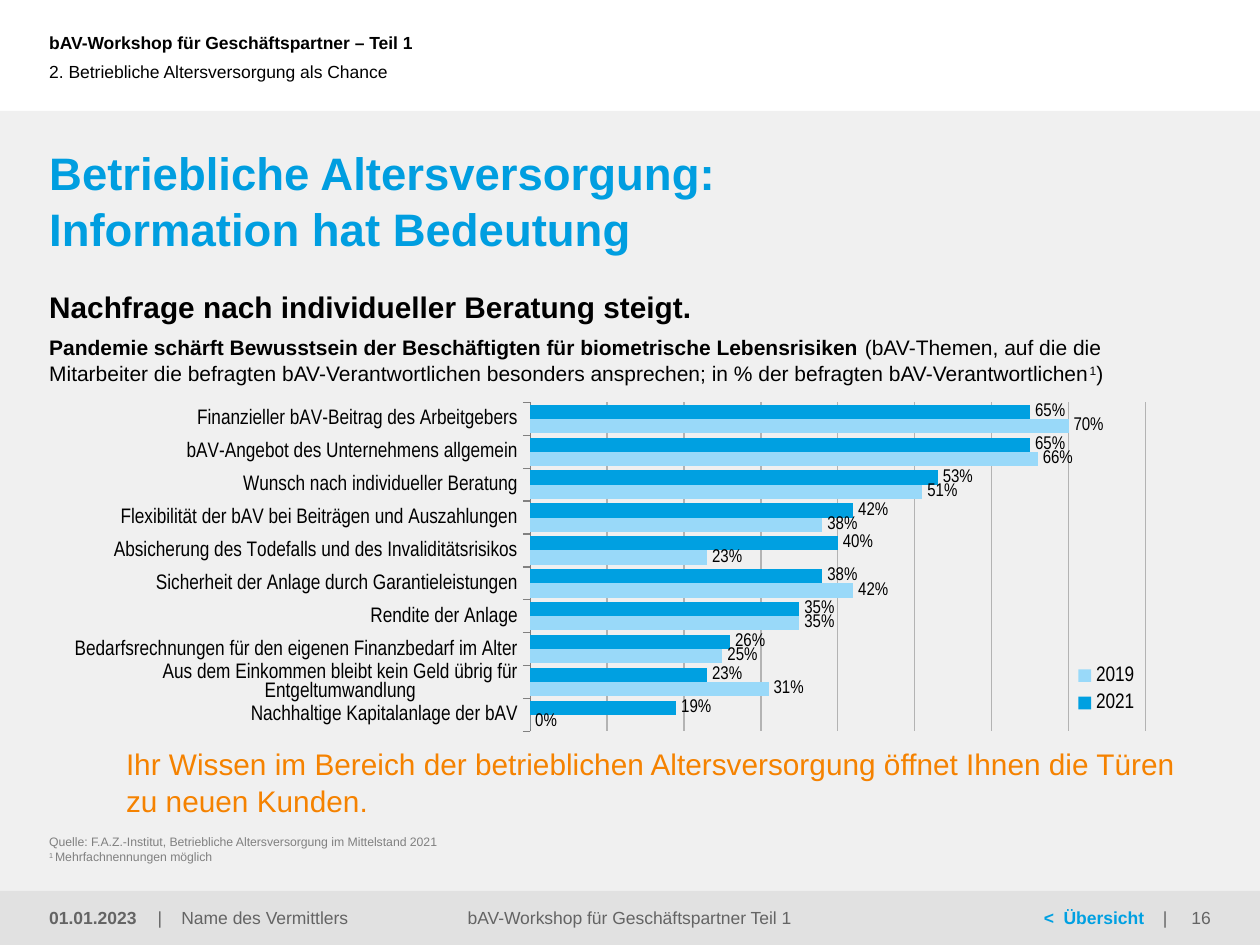
from lxml.etree import SubElement
from pptx import Presentation
from pptx.chart.data import CategoryChartData
from pptx.dml.color import RGBColor
from pptx.enum.chart import XL_CHART_TYPE, XL_LABEL_POSITION, XL_LEGEND_POSITION, XL_TICK_LABEL_POSITION, XL_TICK_MARK
from pptx.enum.shapes import MSO_SHAPE
from pptx.enum.text import MSO_ANCHOR, MSO_AUTO_SIZE, PP_ALIGN
from pptx.oxml import parse_xml
from pptx.oxml.ns import nsdecls, qn
from pptx.util import Inches, Pt

COLORS = {
    "panel": "F0F0F0", "footer": "E1E1E1", "black": "000000", "title": "009EE0",
    "blue": "00A0E1", "light blue": "99D9F9", "orange": "F58200",
    "gray": "646464", "source": "808080", "grid": "B3B3B3", "axis": "808080",
}


def rgb(name):
    return RGBColor.from_string(COLORS[name])


def fill_text(shape, box, runs, size, color, anchor=MSO_ANCHOR.TOP,
              align=PP_ALIGN.LEFT, insets=(0, 0, 0, 0), spacing=1.0):
    """Place a shape and write one paragraph; runs are (text, bold, options)."""
    shape.left, shape.top, shape.width, shape.height = [Inches(value) for value in box]
    frame = shape.text_frame
    frame.word_wrap = True
    frame.auto_size = MSO_AUTO_SIZE.NONE
    frame.vertical_anchor = anchor
    (frame.margin_left, frame.margin_top,
     frame.margin_right, frame.margin_bottom) = [Inches(value) for value in insets]
    paragraph = frame.paragraphs[0]
    paragraph.alignment = align
    paragraph.line_spacing = spacing
    paragraph.space_before = paragraph.space_after = Pt(0)
    properties = paragraph._p.get_or_add_pPr()
    properties.set("marL", "0")
    properties.set("indent", "0")
    SubElement(properties, qn("a:buNone"))
    for text, bold, *options in runs:
        if "break" in options:
            paragraph.add_line_break()
        run = paragraph.add_run()
        run.text = text
        run.font.name = "Arial"
        run.font.size = Pt(size)
        run.font.bold = bold
        run.font.color.rgb = rgb("blue" if "link" in options else color)
        if "superscript" in options:
            run.font._element.set("baseline", "30000")


presentation = Presentation()
presentation.slide_width = Inches(10)
presentation.slide_height = Inches(7.5)
comparison_layout = presentation.slide_layouts[4]
slide = presentation.slides.add_slide(comparison_layout)
shapes = slide.shapes
title, heading, source, message, chapter = slide.placeholders

# Background bands, behind the placeholders
for position, (color, top, height) in enumerate([("panel", 0.88, 6.62), ("footer", 7.07, 0.43)]):
    band = shapes.add_shape(MSO_SHAPE.RECTANGLE, 0, Inches(top), Inches(10), Inches(height))
    band.shadow.inherit = False
    band.fill.solid()
    band.fill.fore_color.rgb = rgb(color)
    band.line.fill.background()
    shapes._spTree.remove(band._element)
    shapes._spTree.insert(2 + position, band._element)

# Title and body texts
fill_text(title, (0.39, 1.14, 9.22, 0.9),
          [("Betriebliche Altersversorgung:", True),
           ("Information hat Bedeutung", True, "break")], 26, "title", spacing=1.03)
fill_text(heading, (0.39, 2.28, 9.22, 0.29),
          [("Nachfrage nach individueller Beratung steigt.", True)], 17, "black", spacing=1.05)
fill_text(source, (0.39, 6.61, 9.21, 0.25),
          [("Quelle: F.A.Z.-Institut, Betriebliche Altersversorgung im Mittelstand 2021", False),
           ("1 ", False, "break", "superscript"),
           ("Mehrfachnennungen möglich", False)],
          7, "source", MSO_ANCHOR.BOTTOM, spacing=1.05)
fill_text(message, (1, 5.9, 8.61, 0.68),
          [("Ihr Wissen im Bereich der betrieblichen Altersversorgung öffnet Ihnen "
            "die Türen zu neuen Kunden.", False)],
          17, "orange", MSO_ANCHOR.MIDDLE, insets=(0, 0, 0, 0.08), spacing=1.05)
fill_text(chapter, (0, 0.25, 7.15, 0.63),
          [("2. Betriebliche Altersversorgung als Chance", False)],
          10, "black", MSO_ANCHOR.MIDDLE, insets=(0.39, 0, 0, 0))

# Header, footer: box, runs, colour, alignment, insets
none = (0, 0, 0, 0)
left_edge = (0.39, 0.05, 0.1, 0.05)
right_edge = (0.1, 0.05, 0.39, 0.05)
for box, runs, color, align, insets in [
    ((0, 0, 6.98, 0.67), [("bAV-Workshop für Geschäftspartner – Teil 1", True)],
     "black", PP_ALIGN.LEFT, left_edge),
    ((0, 7.07, 1.22, 0.43), [("01.01.2023", True)], "gray", PP_ALIGN.LEFT, left_edge),
    ((1.25, 7.07, 0.15, 0.43), [("|", False)], "gray", PP_ALIGN.LEFT, none),
    ((1.44, 7.07, 2.23, 0.43), [("Name des Vermittlers", False)], "gray", PP_ALIGN.LEFT, none),
    ((3.02, 7.07, 3.95, 0.43), [("bAV-Workshop für Geschäftspartner Teil 1", False)],
     "gray", PP_ALIGN.CENTER, none),
    ((6.88, 7.07, 2.2, 0.43), [("<  Übersicht", True, "link")], "gray", PP_ALIGN.RIGHT, none),
    ((9.23, 7.07, 0.1, 0.43), [("|", False)], "gray", PP_ALIGN.LEFT, none),
    ((9.06, 7.07, 0.94, 0.43), [("16", False)], "gray", PP_ALIGN.RIGHT, right_edge),
]:
    text_box = shapes.add_textbox(0, 0, 0, 0)
    fill_text(text_box, box, runs, 10, color, MSO_ANCHOR.MIDDLE, align, insets)

# Bar chart
topics = [
    ("Finanzieller bAV-Beitrag des Arbeitgebers", 0.65, 0.70),
    ("bAV-Angebot des Unternehmens allgemein", 0.65, 0.66),
    ("Wunsch nach individueller Beratung", 0.53, 0.51),
    ("Flexibilität der bAV bei Beiträgen und Auszahlungen", 0.42, 0.38),
    ("Absicherung des Todefalls und des Invaliditätsrisikos", 0.40, 0.23),
    ("Sicherheit der Anlage durch Garantieleistungen", 0.38, 0.42),
    ("Rendite der Anlage", 0.35, 0.35),
    ("Bedarfsrechnungen für den eigenen Finanzbedarf im Alter", 0.26, 0.25),
    ("Aus dem Einkommen bleibt kein Geld übrig für Entgeltumwandlung", 0.23, 0.31),
    ("Nachhaltige Kapitalanlage der bAV", 0.19, 0),
]
names, values_2021, values_2019 = zip(*topics)
chart_data = CategoryChartData(number_format="0%")
chart_data.categories = names
chart_data.add_series("2021", values_2021)
chart_data.add_series("2019", values_2019)
chart = shapes.add_chart(XL_CHART_TYPE.BAR_CLUSTERED, Inches(0.39), Inches(3.05),
                         Inches(8.88), Inches(2.9), chart_data).chart
chart.has_title = False
chart.font.name = "Arial Narrow"
chart.font.size = Pt(12)
chart.font.color.rgb = rgb("black")

plot = chart.plots[0]
plot.gap_width = 30
plot.overlap = 0
plot.vary_by_categories = False
for series, color in zip(plot.series, ["blue", "light blue"]):
    series.format.fill.solid()
    series.format.fill.fore_color.rgb = rgb(color)
    labels = series.data_labels
    labels.show_value = True
    labels.position = XL_LABEL_POSITION.OUTSIDE_END
    labels.number_format = "0%"
    labels.number_format_is_linked = False
    labels.font.size = Pt(10.5)

category_axis = chart.category_axis
category_axis.reverse_order = True
category_axis.major_tick_mark = XL_TICK_MARK.OUTSIDE
category_axis.tick_label_position = XL_TICK_LABEL_POSITION.LOW
category_axis.tick_labels.font.size = Pt(12)
category_axis.format.line.color.rgb = rgb("axis")
value_axis = chart.value_axis
value_axis.visible = False
value_axis.minimum_scale, value_axis.maximum_scale, value_axis.major_unit = 0, 0.8, 0.1
value_axis.has_major_gridlines = True
value_axis.major_gridlines.format.line.color.rgb = rgb("grid")
value_axis.major_gridlines.format.line.width = Pt(0.75)

chart.has_legend = True
chart.legend.position = XL_LEGEND_POSITION.RIGHT
chart.legend.include_in_layout = False
chart.legend.font.size = Pt(12)

# Fixed places of the plot area and the legend, as fractions of the chart
plot_area = chart._chartSpace.chart.plotArea
for parent, index, target, place in [
    (plot_area, 0, '<c:layoutTarget val="inner"/>', (0.43, 0.05, 0.55, 0.9)),
    (chart.legend._element, 1, "", (0.91, 0.75, 0.07, 0.17)),
]:
    for old_layout in parent.findall(qn("c:layout")):
        parent.remove(old_layout)
    modes = "".join(f'<c:{side}Mode val="edge"/>' for side in "xy")
    sizes = "".join(f'<c:{side} val="{value}"/>' for side, value in zip("xywh", place))
    parent.insert(index, parse_xml(
        f'<c:layout {nsdecls("c")}><c:manualLayout>{target}{modes}{sizes}</c:manualLayout></c:layout>'))

# Introduction above the chart
introduction = shapes.add_textbox(0, 0, 0, 0)
fill_text(introduction, (0.39, 2.6, 9.22, 0.45),
          [("Pandemie schärft Bewusstsein der Beschäftigten für biometrische Lebensrisiken ", True),
           ("(bAV-Themen, auf die die Mitarbeiter die befragten bAV-Verantwortlichen besonders "
            "ansprechen; in % der befragten bAV-Verantwortlichen", False),
           ("1", False, "superscript"), (")", False)],
          12, "black", insets=(0, 0.05, 0.1, 0), spacing=1.03)

presentation.save("out.pptx")
